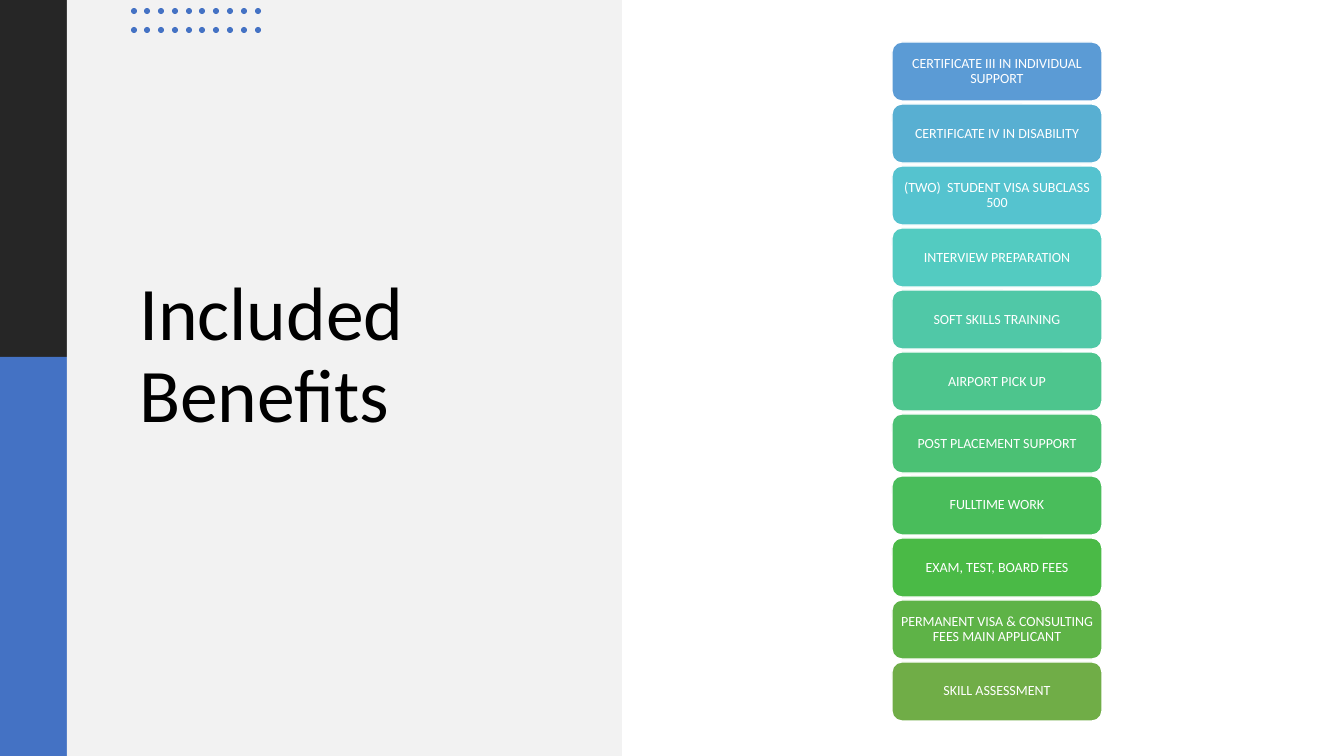
"""Build the Included Benefits slide: title panel on the left, stacked benefit boxes on the right."""
from pptx import Presentation
from pptx.dml.color import RGBColor
from pptx.enum.shapes import MSO_SHAPE
from pptx.enum.text import MSO_ANCHOR, MSO_AUTO_SIZE, PP_ALIGN
from pptx.util import Emu, Pt

BLACK = RGBColor(0x00, 0x00, 0x00)
WHITE = RGBColor(0xFF, 0xFF, 0xFF)
DARK = RGBColor(0x26, 0x26, 0x26)
BLUE = RGBColor(0x44, 0x72, 0xC4)
PANEL = RGBColor(0xF2, 0xF2, 0xF2)
FONT = "Calibri"

BENEFITS = [
    ("CERTIFICATE III IN INDIVIDUAL SUPPORT", RGBColor(0x5B, 0x9B, 0xD5)),
    ("CERTIFICATE IV IN DISABILITY", RGBColor(0x58, 0xAF, 0xD2)),
    ("(TWO)  STUDENT VISA SUBCLASS 500", RGBColor(0x55, 0xC3, 0xCF)),
    ("INTERVIEW PREPARATION", RGBColor(0x53, 0xCB, 0xC1)),
    ("SOFT SKILLS TRAINING", RGBColor(0x50, 0xC8, 0xA7)),
    ("AIRPORT PICK UP", RGBColor(0x4D, 0xC5, 0x8D)),
    ("POST PLACEMENT SUPPORT", RGBColor(0x4B, 0xC1, 0x74)),
    ("FULLTIME WORK", RGBColor(0x49, 0xBD, 0x5B)),
    ("EXAM, TEST, BOARD FEES", RGBColor(0x4A, 0xBA, 0x46)),
    ("PERMANENT VISA & CONSULTING FEES MAIN APPLICANT", RGBColor(0x5E, 0xB3, 0x47)),
    ("SKILL ASSESSMENT", RGBColor(0x70, 0xAD, 0x47)),
]


def px(n):
    return Emu(round(n * 914400 / 100.8))


def add_filled(shapes, kind, left, top, width, height, color):
    sp = shapes.add_shape(kind, px(left), px(top), px(width), px(height))
    sp.shadow.inherit = False
    sp.fill.solid()
    sp.fill.fore_color.rgb = color
    sp.line.fill.background()
    return sp


prs = Presentation()
prs.slide_width, prs.slide_height = px(1344), px(756)
s = prs.slides.add_slide(prs.slide_layouts[5])

add_filled(s.shapes, MSO_SHAPE.RECTANGLE, 0, 0, 67, 357, DARK)
add_filled(s.shapes, MSO_SHAPE.RECTANGLE, 0, 357, 67, 399, BLUE)
panel = add_filled(s.shapes, MSO_SHAPE.RECTANGLE, 67, 0, 555, 756, PANEL)

title = s.shapes.title
panel.element.addnext(title.element)
title.left, title.top, title.width, title.height = px(129), px(132), px(415), px(450)
tf = title.text_frame
tf.text = "Included Benefits"
tf.word_wrap = True
tf.auto_size = MSO_AUTO_SIZE.NONE
tf.vertical_anchor = MSO_ANCHOR.MIDDLE
p = tf.paragraphs[0]
p.alignment = PP_ALIGN.LEFT
p.line_spacing = 0.9
p.font.size = Pt(54)
p.font.name = FONT
p.font.color.rgb = BLACK

dots = s.shapes.add_group_shape()
for col in range(10):
    for top in (8, 27):
        add_filled(dots.shapes, MSO_SHAPE.OVAL, 131 + col * 124 // 9, top, 6, 6, BLUE)

boxes = s.shapes.add_group_shape()
for i, (benefit, color) in enumerate(BENEFITS):
    sp = add_filled(boxes.shapes, MSO_SHAPE.ROUNDED_RECTANGLE, 892, 42 + i * 62, 210, 59, color)
    sp.line.color.rgb = WHITE
    sp.line.width = Pt(1)
    tf = sp.text_frame
    tf.text = benefit
    tf.word_wrap = True
    tf.vertical_anchor = MSO_ANCHOR.MIDDLE
    tf.margin_left = tf.margin_right = px(4)
    tf.margin_top = tf.margin_bottom = px(2)
    p = tf.paragraphs[0]
    p.alignment = PP_ALIGN.CENTER
    p.line_spacing = 0.9
    p.font.size = Pt(10)
    p.font.name = FONT
    p.font.color.rgb = WHITE

prs.save("out.pptx")
